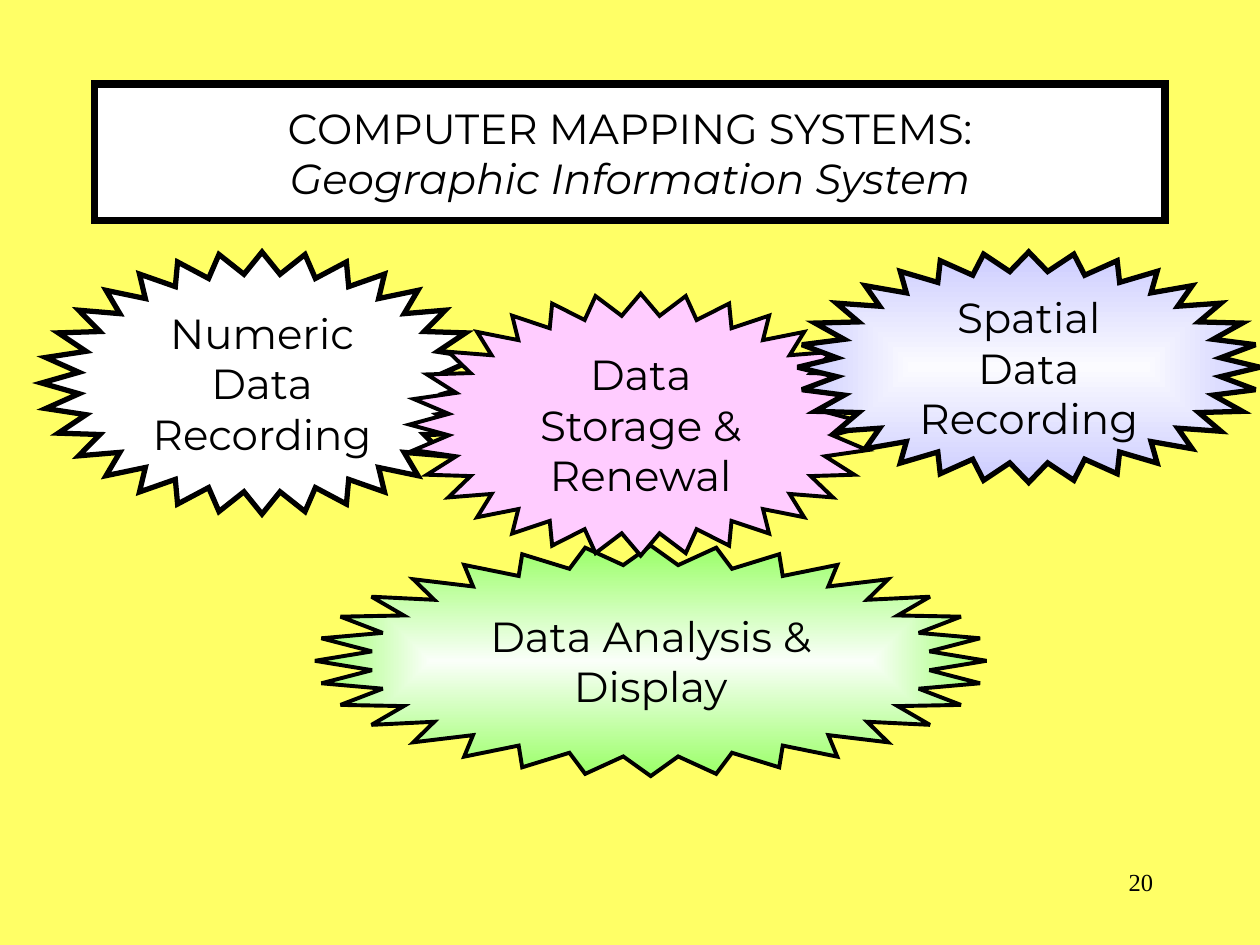
from lxml import etree
from pptx import Presentation
from pptx.dml.color import RGBColor
from pptx.enum.shapes import MSO_SHAPE
from pptx.enum.text import MSO_ANCHOR, PP_ALIGN
from pptx.oxml import parse_xml
from pptx.oxml.ns import nsdecls, qn
from pptx.util import Inches, Pt

RECTANGLE, STAR = MSO_SHAPE.RECTANGLE, MSO_SHAPE.STAR_32_POINT
CENTER, RIGHT = PP_ALIGN.CENTER, PP_ALIGN.RIGHT
MIDDLE = MSO_ANCHOR.MIDDLE

BLACK = RGBColor(0x00, 0x00, 0x00)
WHITE = RGBColor(0xFF, 0xFF, 0xFF)
YELLOW = RGBColor(0xFF, 0xFF, 0x66)
PINK = RGBColor(0xFF, 0xCC, 0xFF)
PALE_GREEN, GREEN = RGBColor(0xFA, 0xFF, 0xF9), RGBColor(0x99, 0xFF, 0x66)
PALE_BLUE, BLUE = RGBColor(0xFB, 0xFB, 0xFF), RGBColor(0xCC, 0xCC, 0xFF)

STAR_DEPTH = 0.417
BODY_FONT = {"name": "Montserrat", "size": Pt(24)}
NUMBER_FONT = {"name": "Times New Roman", "size": Pt(14)}

# Each line is (text, italic); boxes are left, top, width, height in inches.
TITLE = [("COMPUTER MAPPING SYSTEMS:", False), ("Geographic Information System", True)]
TITLE_BOX = (0.75, 0.67, 8.5, 1.08)
NUMBER_BOX = (7.17, 6.83, 2.08, 0.5)

# Text lines, box, fill colours (centre to edge), line width; back to front.
STARS = [
    (["Numeric Data", "Recording"], (0.33, 2, 3.5, 2.08), [WHITE], 3),
    (["Data Analysis & Display"], (2.5, 4.33, 5.33, 1.83), [PALE_GREEN, GREEN], 2.25),
    (["Data Storage & Renewal"], (3.25, 2.33, 3.67, 2.08), [PINK], 2.25),
    (["Spatial", "Data Recording"], (6.33, 2, 3.67, 1.83), [PALE_BLUE, BLUE], 3),
]


def write_lines(shape, lines, font_format, alignment):
    """Write the lines as one paragraph with line breaks between them."""
    frame = shape.text_frame
    frame.word_wrap = True
    paragraph = frame.paragraphs[0]
    paragraph.alignment = alignment
    for index, (text, italic) in enumerate(lines):
        if index:
            paragraph.add_line_break()
        run = paragraph.add_run()
        run.text = text
        run.font.color.rgb = BLACK
        for name, value in {**font_format, "italic": italic}.items():
            setattr(run.font, name, value)


def fill_from_centre(shape, colours):
    """Fill with one colour, or with a gradient from the centre to the edge."""
    if len(colours) == 1:
        shape.fill.solid()
        shape.fill.fore_color.rgb = colours[0]
        return
    shape.fill.gradient()
    for position, (stop, colour) in enumerate(zip(shape.fill.gradient_stops, colours)):
        stop.position = position
        stop.color.rgb = colour
    gradient = shape._element.spPr.find(qn("a:gradFill"))
    linear = gradient.find(qn("a:lin"))
    gradient.replace(linear, parse_xml(
        f'<a:path {nsdecls("a")} path="shape">'
        '<a:fillToRect l="50000" t="50000" r="50000" b="50000"/></a:path>'))


def add_outlined_shape(slide, kind, box, colours, line_width, lines):
    shape = slide.shapes.add_shape(kind, *map(Inches, box))
    shape.shadow.inherit = False
    fill_from_centre(shape, colours)
    shape.line.color.rgb = BLACK
    shape.line.width = Pt(line_width)
    miter = etree.SubElement(shape.line._get_or_add_ln(), qn("a:miter"))
    miter.set("lim", "800000")
    shape.text_frame.vertical_anchor = MIDDLE
    write_lines(shape, lines, BODY_FONT, CENTER)
    return shape


def main():
    presentation = Presentation()
    presentation.slide_width, presentation.slide_height = Inches(10), Inches(7.5)
    slide = presentation.slides.add_slide(presentation.slide_layouts[6])
    slide.background.fill.solid()
    slide.background.fill.fore_color.rgb = YELLOW

    number = slide.shapes.add_textbox(*map(Inches, NUMBER_BOX))
    write_lines(number, [("20", False)], NUMBER_FONT, RIGHT)
    add_outlined_shape(slide, RECTANGLE, TITLE_BOX, [WHITE], 4.5, TITLE)
    for texts, box, colours, line_width in STARS:
        lines = [(text, False) for text in texts]
        star = add_outlined_shape(slide, STAR, box, colours, line_width, lines)
        star.adjustments[0] = STAR_DEPTH

    presentation.save("out.pptx")


if __name__ == "__main__":
    main()
